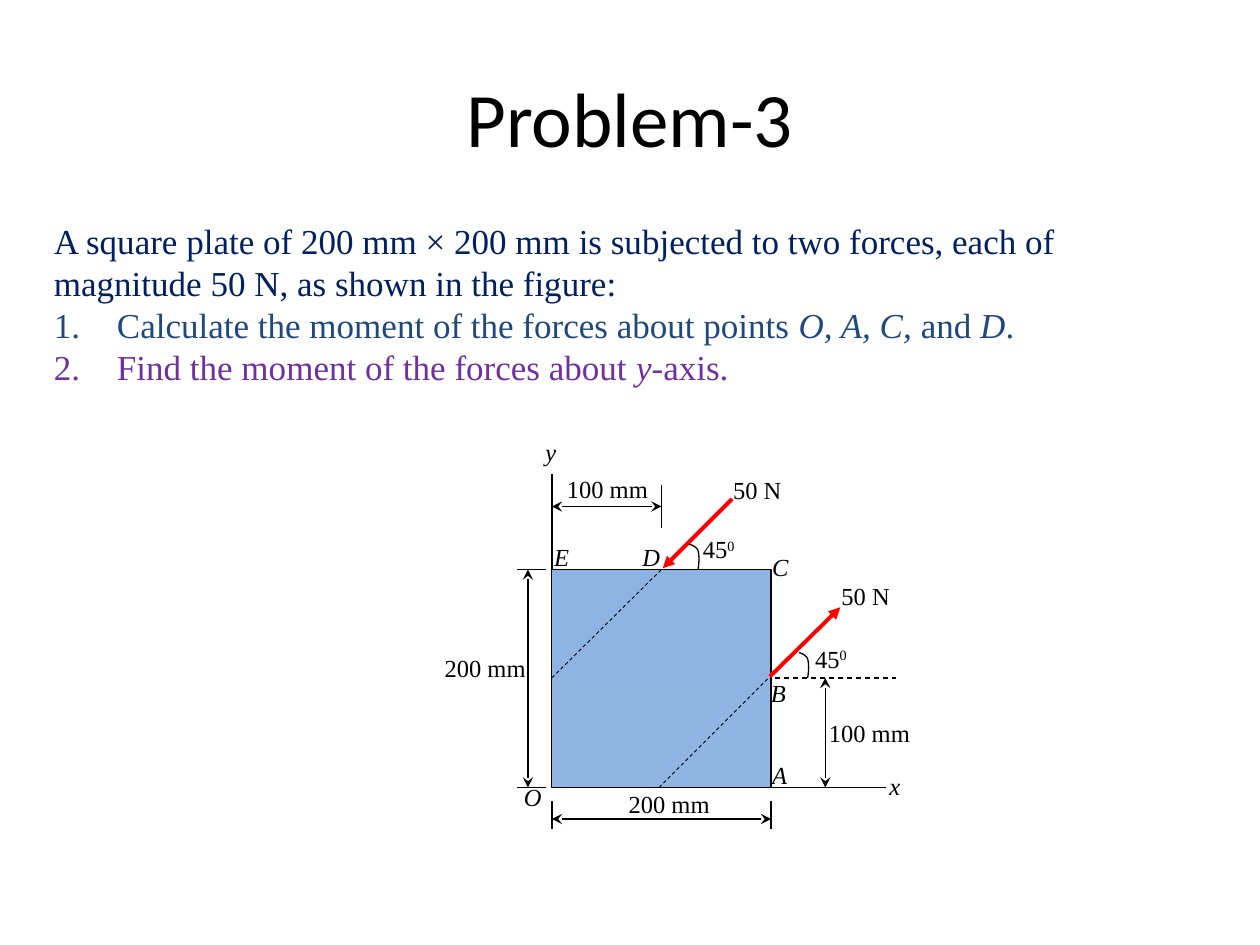
"""Build the slide of Problem-3, moments of two forces on a square plate."""
import pptx
import pptx.dml.color
import pptx.enum.dml
import pptx.enum.shapes
import pptx.enum.text
import pptx.oxml
import pptx.oxml.ns
import pptx.util

Inches = pptx.util.Inches
Pt = pptx.util.Pt
DASH = pptx.enum.dml.MSO_LINE.DASH

COLORS = {
    "black": "000000",
    "force": "FF0000",
    "plate_top": "8DB3E2",
    "plate_bottom": "91B5E3",
    "intro": "002060",
    "first": "1F497D",
    "second": "7030A0",
}
LEFT, MIDDLE_X, RIGHT = 4.38, 5.25, 6.12
TOP, MIDDLE_Y, BOTTOM = 4.52, 5.38, 6.25


def color(name):
    return pptx.dml.color.RGBColor.from_string(COLORS[name])


def set_values(target, values):
    for name, value in values.items():
        setattr(target, name, value)


def add_xml(parent, tag, **attributes):
    child = pptx.oxml.parse_xml(f"<a:{tag} {pptx.oxml.ns.nsdecls('a')}/>")
    for name, value in attributes.items():
        child.set(name, value)
    parent.append(child)


def cubic(start, first, second, end, steps=8):
    for step in range(1, steps + 1):
        t = step / steps
        weights = ((1 - t) ** 3, 3 * t * (1 - t) ** 2, 3 * t * t * (1 - t), t ** 3)
        points = (start, first, second, end)
        yield tuple(sum(w * p[axis] for w, p in zip(weights, points)) for axis in (0, 1))


class Drawing:
    def __init__(self, slide, font="Times New Roman", size=14):
        self.slide, self.font, self.size = slide, font, size

    def title(self, text, left, top, width, height):
        shape = self.slide.shapes.title
        set_values(shape, {"left": Inches(left), "top": Inches(top),
                           "width": Inches(width), "height": Inches(height)})
        shape.text_frame.vertical_anchor = pptx.enum.text.MSO_ANCHOR.MIDDLE
        paragraph = shape.text_frame.paragraphs[0]
        paragraph.alignment = pptx.enum.text.PP_ALIGN.CENTER
        self.run(paragraph, text, "black", name="Calibri", size=Pt(44))

    def run(self, paragraph, text, ink, **values):
        run = paragraph.add_run()
        run.text = text
        set_values(run.font, {"name": self.font, "size": Pt(self.size), **values})
        run.font.color.rgb = color(ink)
        return run

    def text_box(self, left, top, width, height):
        shape = self.slide.shapes.add_textbox(*map(Inches, (left, top, width, height)))
        shape.text_frame.word_wrap = True
        return shape.text_frame

    def label(self, text, left, top, width=1, italic=False, superscript=""):
        paragraph = self.text_box(left, top, width, 0.33).paragraphs[0]
        paragraph.space_after = Pt(10)
        self.run(paragraph, text, "black", italic=italic)
        if superscript:
            run = self.run(paragraph, superscript, "black")
            run.font._element.set("baseline", "30000")

    def statement(self, left, top, width, height, paragraphs):
        frame = self.text_box(left, top, width, height)
        for index, (ink, numbered, parts) in enumerate(paragraphs):
            paragraph = frame.add_paragraph() if index else frame.paragraphs[0]
            if numbered:
                properties = paragraph._p.get_or_add_pPr()
                properties.set("marL", str(Inches(0.5)))
                properties.set("indent", str(Inches(-0.5)))
                add_xml(properties, "buFont", typeface="+mj-lt")
                add_xml(properties, "buAutoNum", type="arabicPeriod")
            for text, italic in parts:
                self.run(paragraph, text, ink, size=Pt(20), italic=italic)

    def outline(self, line, ink="black", width=0.75, dash_style=None):
        line.color.rgb = color(ink)
        set_values(line, {"width": Pt(width), "dash_style": dash_style})

    def line(self, start, end, head=None, tail=None, **style):
        connector = self.slide.shapes.add_connector(
            pptx.enum.shapes.MSO_CONNECTOR.STRAIGHT, *map(Inches, start + end))
        self.outline(connector.line, **style)
        for tag, kind in (("headEnd", head), ("tailEnd", tail)):
            if kind:
                add_xml(connector.line._get_or_add_ln(), tag, type=kind)
        add_xml(connector._element.spPr, "effectLst")

    def dimension(self, start, end):
        self.line(start, end, head="stealth", tail="stealth")

    def plate(self, left, top, right, bottom):
        shape = self.slide.shapes.add_shape(
            pptx.enum.shapes.MSO_SHAPE.RECTANGLE,
            *map(Inches, (left, top, right - left, bottom - top)))
        shape.shadow.inherit = False
        shape.fill.gradient()
        shape.fill.gradient_angle = 270
        for stop, name in zip(shape.fill.gradient_stops, ("plate_top", "plate_bottom")):
            stop.color.rgb = color(name)
        self.outline(shape.line)

    def angle_arc(self, x, y):
        bend, tip = (x, y - 0.15), (x - 0.07, y - 0.2)
        points = [
            *cubic((x, y), (x + 0.01, y - 0.06), (x + 0.01, y - 0.11), bend),
            *cubic(bend, (x - 0.01, y - 0.18), (x - 0.06, y - 0.2), tip),
        ]
        builder = self.slide.shapes.build_freeform(Inches(x), Inches(y))
        builder.add_line_segments([tuple(map(Inches, point)) for point in points], close=False)
        shape = builder.convert_to_shape()
        shape.shadow.inherit = False
        shape.fill.background()
        self.outline(shape.line)


def main():
    presentation = pptx.Presentation()
    presentation.slide_width, presentation.slide_height = Inches(10), Inches(7.5)
    drawing = Drawing(presentation.slides.add_slide(presentation.slide_layouts[5]))

    drawing.title("Problem-3", 0.5, 0.3, 9, 1.25)
    drawing.statement(0.33, 1.69, 9.17, 1.45, [
        ("intro", False, [("A square plate of 200 mm × 200 mm is subjected to two forces, "
                           "each of magnitude 50 N, as shown in the figure:", False)]),
        ("first", True, [("Calculate the moment of the forces about points ", False),
                         ("O, A, C, ", True), ("and ", False), ("D", True), (".", False)]),
        ("second", True, [("Find the moment of the forces about ", False),
                          ("y", True), ("-axis.", False)]),
    ])

    drawing.plate(LEFT, TOP, RIGHT, BOTTOM)
    drawing.line((LEFT, TOP), (LEFT, 3.76))
    drawing.line((RIGHT, BOTTOM), (7.03, BOTTOM))
    drawing.line((MIDDLE_X, 3.85), (MIDDLE_X, 4.19))
    for x in (LEFT, RIGHT):
        drawing.line((x, 6.36), (x, 6.58))
    for y in (TOP, BOTTOM):
        drawing.line((4.1, y), (4.33, y))

    drawing.dimension((LEFT, 6.5), (RIGHT, 6.5))
    drawing.dimension((4.19, TOP), (4.19, BOTTOM))
    drawing.dimension((6.55, MIDDLE_Y), (6.55, BOTTOM))
    drawing.dimension((LEFT, 4.02), (MIDDLE_X, 4.02))

    drawing.line((6.15, MIDDLE_Y), (7.11, MIDDLE_Y), dash_style=DASH)
    drawing.line((LEFT, MIDDLE_Y), (MIDDLE_X, TOP), width=0.5, dash_style=DASH)
    drawing.line((5.23, BOTTOM), (6.1, MIDDLE_Y), width=0.5, dash_style=DASH)
    for start, end in (((5.81, 3.96), (5.26, 4.51)), ((6.11, 5.37), (6.67, 4.82))):
        drawing.line(start, end, tail="triangle", ink="force", width=2.25)
    for x, y in ((5.54, TOP), (6.41, MIDDLE_Y)):
        drawing.angle_arc(x, y)

    for text, left, top in (("200 mm", 4.89, 6.21), ("200 mm", 3.43, 5.13),
                            ("100 mm", 6.48, 5.65), ("100 mm", 4.4, 3.71),
                            ("50 N", 6.58, 4.56), ("50 N", 5.72, 3.72)):
        drawing.label(text, left, top)
    for left, top in ((6.37, 5.06), (5.48, 4.19)):
        drawing.label("45", left, top, width=0.78, superscript="0")
    for text, left, top in (("x", 6.96, 6.07), ("y", 4.23, 3.42), ("O", 4.06, 6.16),
                            ("A", 6.03, 5.98), ("B", 6.02, 5.33), ("C", 6.03, 4.33),
                            ("D", 5, 4.25), ("E", 4.3, 4.25)):
        drawing.label(text, left, top, width=0.35, italic=True)

    presentation.save("out.pptx")


if __name__ == "__main__":
    main()
